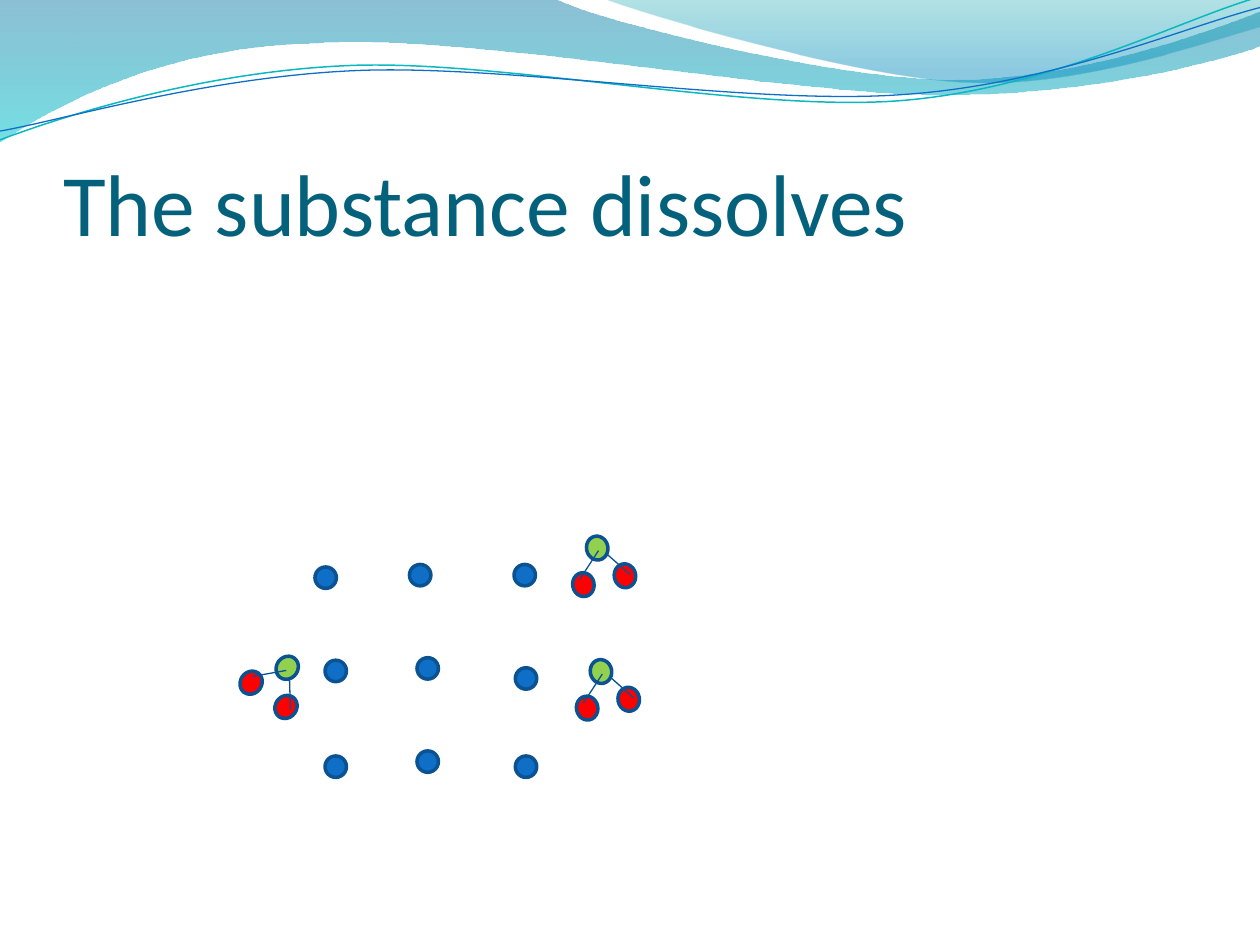
from dataclasses import dataclass
from math import cos, radians, sin

from lxml.etree import SubElement
from pptx import Presentation
from pptx.dml.color import RGBColor
from pptx.enum.shapes import MSO_CONNECTOR as Connector, MSO_SHAPE as Preset
from pptx.enum.text import MSO_ANCHOR as Anchor, MSO_AUTO_SIZE as AutoSize, PP_ALIGN as Align
from pptx.oxml.ns import qn
from pptx.util import Emu, Pt

PX = 9144  # EMU in one px, 100 px to the inch

Point = tuple[float, float]


@dataclass(frozen=True)
class Theme:
    font: str = "Calibri"
    title_size: int = 50
    title: str = "04617B"
    ion: str = "0F6FC6"
    oxygen: str = "92D050"
    hydrogen: str = "FF0000"
    outline: str = "0B5292"
    bond: str = "095295"
    outline_width: float = 2
    bond_width: float = 0.75


@dataclass(frozen=True)
class Stop:
    position: float
    color: str
    opacity: int


@dataclass(frozen=True)
class Band:
    """Filled wave: each segment holds one end point or three Bezier points."""
    start: Point
    segments: list[list[Point]]
    stops: tuple[Stop, Stop]


@dataclass(frozen=True)
class Strand:
    """Thin wave line, tilted about its centre."""
    start: Point
    segments: list[list[Point]]
    center: Point
    color: str
    width: float


@dataclass(frozen=True)
class Molecule:
    """Water molecule, placed by the centre of its oxygen atom."""
    x: int
    y: int
    turn: float = 0


THEME = Theme()

BANDS = [
    Band((0, 0), [
        [(440, -1)],
        [(476, 17), (664, 63), (758, 63)],
        [(853, 63), (958, 26), (1000, 9)],
        [(1001, 36)],
        [(983, 44), (870, 76), (746, 75)],
        [(622, 75), (382, 28), (257, 34)],
        [(129, 36), (46, 83), (-1, 113)],
        [(0, 0)],
    ], (Stop(0, "0074A1", 45), Stop(1, "00C6CF", 55))),
    Band((479, -1), [
        [(509, 11), (682, 62), (769, 65)],
        [(856, 69), (961, 32), (1000, 21)],
        [(1000, 0)],
        [(479, -1)],
    ], (Stop(0, "00A1A9", 30), Stop(0.8, "008BBF", 45))),
]
STRAND_TILT = 357.3
STRANDS = [
    Strand((0, 111), [
        [(48, 93), (158, 57), (277, 52)],
        [(395, 47), (593, 89), (713, 80)],
        [(833, 71), (938, 15), (998, -2)],
    ], (499, 57.5), "0AB8BF", 0.85),
    Strand((0, 104), [
        [(47, 96), (164, 61), (283, 56)],
        [(403, 51), (597, 84), (717, 75)],
        [(836, 67), (941, 21), (1000, 6)],
    ], (499.5, 59), "0F6FC6", 0.75),
]

ION_SIZE = 17
IONS = [
    (250, 450), (325, 448), (408, 448),
    (258, 524), (331, 522), (409, 530),
    (258, 600), (331, 596), (409, 600),
]

# Molecule parts, measured from the centre of the oxygen atom
ATOM_WIDTH, ATOM_HEIGHT, ATOM_TILT = 17, 19, 348.8
ATOMS = [(-11, 29, THEME.hydrogen), (22, 22, THEME.hydrogen), (0, 0, THEME.oxygen)]
BONDS = [((-14, 25), (1, 2)), ((26, 21), (8, 5))]
MOLECULES = [Molecule(477, 533), Molecule(474, 435), Molecule(228, 530, 46.8)]


def px(length: float) -> Emu:
    return Emu(round(length * PX))


def rgb(color: str) -> RGBColor:
    return RGBColor.from_string(color)


def turned(point: Point, center: Point, degrees: float) -> Point:
    """Turn a point clockwise about a centre."""
    cosine, sine = cos(radians(degrees)), sin(radians(degrees))
    x, y = point[0] - center[0], point[1] - center[1]
    return center[0] + x * cosine - y * sine, center[1] + x * sine + y * cosine


def add_outline(shapes, start: Point, segments: list[list[Point]], close: bool):
    """Draw a freeform, joining each run of three points into a Bezier curve."""
    builder = shapes.build_freeform(px(start[0]), px(start[1]))
    builder.add_line_segments([(px(x), px(y)) for segment in segments for x, y in segment],
                              close=close)
    shape = builder.convert_to_shape()
    shape.shadow.inherit = False
    lines = shape.element.spPr.iter(qn("a:lnTo"))
    lines = iter(list(lines))
    for segment in segments:
        first, *others = [next(lines) for _ in segment]
        if others:
            first.tag = qn("a:cubicBezTo")
            for line in others:
                first.append(line[0])
                line.getparent().remove(line)
    return shape


def add_band(shapes, band: Band) -> None:
    shape = add_outline(shapes, band.start, band.segments, close=True)
    shape.line.fill.background()
    shape.fill.gradient()
    shape.fill.gradient_angle = 270  # top to bottom
    for gradient_stop, stop in zip(shape.fill.gradient_stops, band.stops):
        gradient_stop.position = stop.position
        gradient_stop.color.rgb = rgb(stop.color)
    for color, stop in zip(shape.element.spPr.iter(qn("a:srgbClr")), band.stops):
        SubElement(color, qn("a:alpha"), val=str(stop.opacity * 1000))


def add_strand(shapes, strand: Strand) -> None:
    start, *segments = [
        [turned(point, strand.center, -STRAND_TILT) for point in segment]
        for segment in [[strand.start], *strand.segments]]
    shape = add_outline(shapes, start[0], segments, close=False)
    shape.rotation = STRAND_TILT
    shape.fill.background()
    shape.line.color.rgb = rgb(strand.color)
    shape.line.width = Pt(strand.width)


def add_ball(shapes, preset: Preset, left: float, top: float, width: int, height: int,
             color: str, rotation: float = 0) -> None:
    shape = shapes.add_shape(preset, px(left), px(top), px(width), px(height))
    shape.rotation = rotation
    shape.shadow.inherit = False
    shape.fill.solid()
    shape.fill.fore_color.rgb = rgb(color)
    shape.line.color.rgb = rgb(THEME.outline)
    shape.line.width = Pt(THEME.outline_width)


def add_molecule(shapes, molecule: Molecule) -> None:
    group = shapes.add_group_shape()

    def place(x: float, y: float) -> Point:
        center = molecule.x, molecule.y
        return turned((center[0] + x, center[1] + y), center, molecule.turn)

    for x, y, color in ATOMS:
        center_x, center_y = place(x, y)
        add_ball(group.shapes, Preset.FLOWCHART_CONNECTOR,
                 center_x - ATOM_WIDTH / 2, center_y - ATOM_HEIGHT / 2,
                 ATOM_WIDTH, ATOM_HEIGHT, color, (ATOM_TILT + molecule.turn) % 360)
    for start, end in BONDS:
        ends = [px(value) for point in (start, end) for value in place(*point)]
        bond = group.shapes.add_connector(Connector.STRAIGHT, *ends)
        bond.line.color.rgb = rgb(THEME.bond)
        bond.line.width = Pt(THEME.bond_width)
        SubElement(bond.element.spPr, qn("a:effectLst"))


def set_title(slide, text: str) -> None:
    title = slide.shapes.title
    title.left, title.top, title.width, title.height = px(50), px(77), px(900), px(125)
    frame = title.text_frame
    frame.text = text
    frame.auto_size = AutoSize.NONE
    frame.vertical_anchor = Anchor.BOTTOM
    frame.margin_left = frame.margin_right = frame.margin_bottom = 0
    frame.margin_top = px(5)
    paragraph = frame.paragraphs[0]
    paragraph.alignment = Align.LEFT
    paragraph.font.name = THEME.font
    paragraph.font.size = Pt(THEME.title_size)
    paragraph.font.color.rgb = rgb(THEME.title)
    slide.shapes.element.append(title.element)  # in front of the waves


def main() -> None:
    presentation = Presentation()
    presentation.slide_width, presentation.slide_height = px(1000), px(750)
    slide = presentation.slides.add_slide(presentation.slide_layouts[5])  # title only
    # Waves along the top
    for band in BANDS:
        add_band(slide.shapes, band)
    strand_group = slide.shapes.add_group_shape()
    for strand in STRANDS:
        add_strand(strand_group.shapes, strand)
    set_title(slide, "The substance dissolves")
    # Crystal of ions with water around it
    for left, top in IONS:
        add_ball(slide.shapes, Preset.OVAL, left, top, ION_SIZE, ION_SIZE, THEME.ion)
    for molecule in MOLECULES:
        add_molecule(slide.shapes, molecule)
    presentation.save("out.pptx")


if __name__ == "__main__":
    main()
